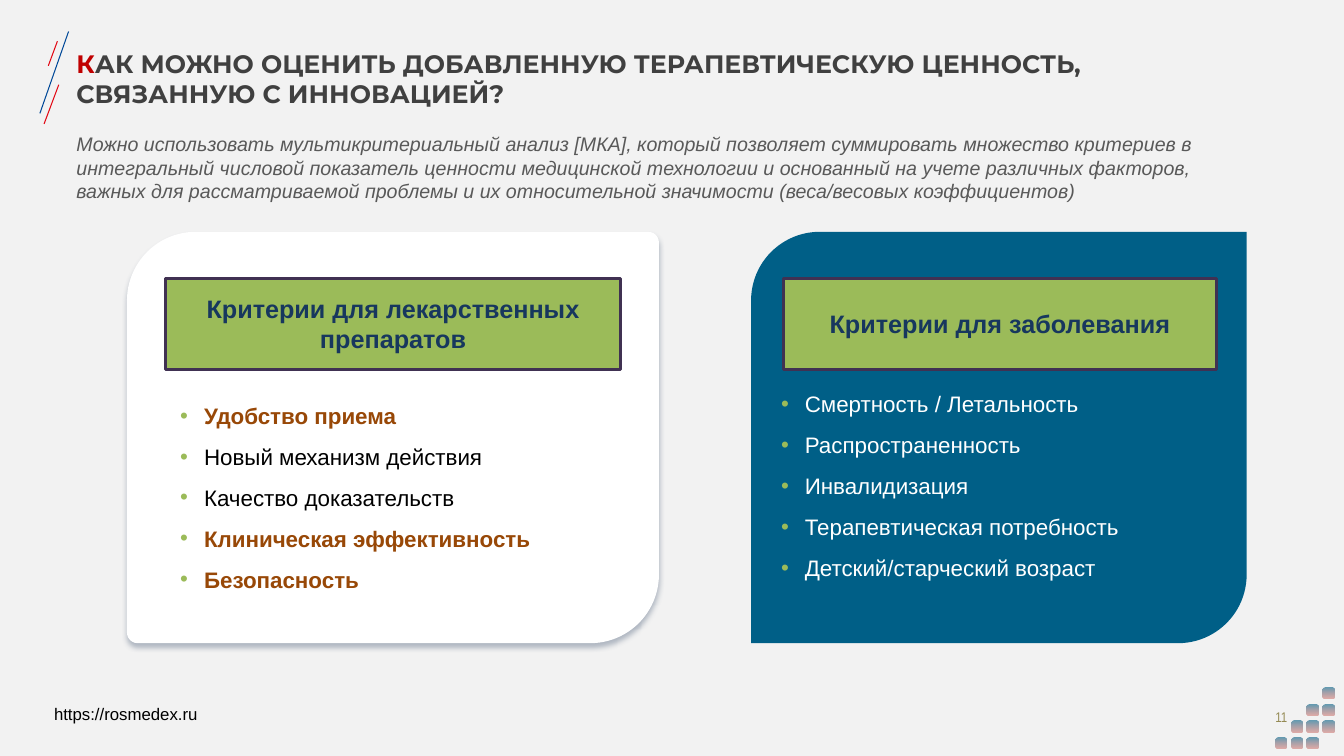
from lxml.etree import SubElement
from pptx import Presentation
from pptx.dml.color import RGBColor
from pptx.enum.shapes import MSO_CONNECTOR, MSO_SHAPE
from pptx.enum.text import MSO_ANCHOR, PP_ALIGN
from pptx.oxml.ns import qn
from pptx.util import Pt

COLORS = {
    "bg": "F2F2F2", "red": "E20713", "blue": "004898", "teal": "005F87",
    "brick": "C3443B", "accent": "C00000", "title": "404040", "lead": "595959",
    "page": "948A54", "white": "FFFFFF", "black": "000000", "green": "9BBB59",
    "plum": "403152", "navy": "17375E", "brown": "984807", "shadow": "4C5E79",
}


def rgb(name):
    return RGBColor.from_string(COLORS[name])


class Deck:
    font = "Arial"

    def __init__(self, width, height):
        self.prs = Presentation()
        self.prs.slide_width, self.prs.slide_height = Pt(width), Pt(height)
        self.s = self.prs.slides.add_slide(self.prs.slide_layouts[6])
        self.s.background.fill.solid()
        self.s.background.fill.fore_color.rgb = rgb("bg")

    def style(self, r, size, color, bold=False, italic=False, font=None):
        r.font.name = font or self.font
        r.font.size = Pt(size)
        r.font.bold, r.font.italic = bold, italic
        r.font.color.rgb = rgb(color)

    def line(self, x1, y1, x2, y2, color):
        c = self.s.shapes.add_connector(MSO_CONNECTOR.STRAIGHT, Pt(x1), Pt(y1), Pt(x2), Pt(y2))
        c.line.color.rgb = rgb(color)
        c.line.width = Pt(0.75)
        SubElement(c.element.spPr, qn("a:effectLst"))

    def shape(self, kind, x, y, w, h, fill=None, border=None):
        sp = self.s.shapes.add_shape(kind, Pt(x), Pt(y), Pt(w), Pt(h))
        sp.shadow.inherit = False
        if fill:
            sp.fill.solid()
            sp.fill.fore_color.rgb = rgb(fill)
        if border:
            sp.line.color.rgb = rgb(border)
            sp.line.width = Pt(2)
        else:
            sp.line.fill.background()
        return sp

    def tile(self, x, y, side):
        sp = self.shape(MSO_SHAPE.ROUNDED_RECTANGLE, x, y, side, side)
        sp.fill.gradient()
        sp.fill.gradient_angle = 270
        for stop, pos, color in zip(sp.fill.gradient_stops, (0, 1), ("teal", "brick")):
            stop.position = pos
            stop.color.rgb = rgb(color)
        for clr, alpha in zip(sp.element.spPr.iter(qn("a:srgbClr")), (60, 40)):
            SubElement(clr, qn("a:alpha"), val=str(alpha * 1000))

    def drop_shadow(self, sp):
        effects = sp.element.spPr.find(qn("a:effectLst"))
        shadow = SubElement(effects, qn("a:outerShdw"), blurRad=str(Pt(4)), dist=str(Pt(3)),
                            dir="5400000", algn="t", rotWithShape="0")
        clr = SubElement(shadow, qn("a:srgbClr"), val=COLORS["shadow"])
        SubElement(clr, qn("a:alpha"), val="40000")

    def text(self, x, y, w, h, text, size, color, anchor=MSO_ANCHOR.TOP,
             align=PP_ALIGN.LEFT, wrap=True, **look):
        sp = self.s.shapes.add_textbox(Pt(x), Pt(y), Pt(w), Pt(h))
        tf = sp.text_frame
        tf.text = text
        tf.word_wrap = wrap
        tf.vertical_anchor = anchor
        p = tf.paragraphs[0]
        p.alignment = align
        self.style(p.runs[0], size, color, **look)
        return p

    def label(self, x, y, w, h, text):
        sp = self.shape(MSO_SHAPE.RECTANGLE, x, y, w, h, "green", "plum")
        tf = sp.text_frame
        tf.text = text
        tf.word_wrap = True
        tf.vertical_anchor = MSO_ANCHOR.MIDDLE
        p = tf.paragraphs[0]
        p.alignment = PP_ALIGN.CENTER
        self.style(p.runs[0], 18, "navy", bold=True)

    def bullets(self, sp, items, color, strong=()):
        tf = sp.text_frame
        tf.text = "\n".join(items)
        tf.word_wrap = True
        tf.vertical_anchor = MSO_ANCHOR.TOP
        for p in tf.paragraphs:
            pPr = p._p.get_or_add_pPr()
            pPr.set("marL", str(Pt(17)))
            pPr.set("indent", str(-Pt(17)))
            SubElement(SubElement(pPr, qn("a:buClr")), qn("a:srgbClr"), val=COLORS["green"])
            SubElement(pPr, qn("a:buFont"), typeface=self.font)
            SubElement(pPr, qn("a:buChar"), char="•")
            p.alignment = PP_ALIGN.LEFT
            p.space_after = Pt(10)
            bold = p.text in strong
            self.style(p.runs[0], 16, "brown" if bold else color, bold=bold)


def main():
    d = Deck(960, 540)

    d.line(34.5, 47, 41, 29.5, "red")
    d.line(28.5, 81, 49, 22.5, "blue")
    d.line(31.5, 88.5, 42, 60.5, "red")

    for col in range(4):
        for row in range(3 - col, 3 if col == 3 else 4):
            d.tile(911 + col * 11.3, 491 + row * 12, 8)

    title = d.text(47.5, 34, 750, 44, "К", 18, "accent", MSO_ANCHOR.MIDDLE,
                   bold=True, font="Montserrat")
    r = title.add_run()
    r.text = "АК МОЖНО ОЦЕНИТЬ ДОБАВЛЕННУЮ ТЕРАПЕВТИЧЕСКУЮ ЦЕННОСТЬ, СВЯЗАННУЮ С ИННОВАЦИЕЙ?"
    d.style(r, 18, "title", bold=True, font="Montserrat")

    d.text(47.5, 90.7, 854, 58,
           "Можно использовать мультикритериальный анализ [МКА], который позволяет "
           "суммировать множество критериев в интегральный числовой показатель ценности "
           "медицинской технологии и основанный на учете различных факторов, важных для "
           "рассматриваемой проблемы и их относительной значимости (веса/весовых коэффициентов)",
           14, "lead", italic=True)

    disease = d.shape(MSO_SHAPE.ROUND_2_DIAG_RECTANGLE, 536.5, 165.6, 354, 293.8, "teal")
    disease.text_frame.margin_top = Pt(99)
    d.bullets(disease, ["Смертность / Летальность", "Распространенность", "Инвалидизация",
                        "Терапевтическая потребность", "Детский/старческий возраст"], "white")
    d.label(559.5, 198.7, 309.5, 65, "Критерии для заболевания")

    drug = d.shape(MSO_SHAPE.ROUND_2_DIAG_RECTANGLE, 90.7, 165.6, 380, 293.8, "white")
    drug.adjustments[0], drug.adjustments[1] = 0.167, 0.026
    d.drop_shadow(drug)
    drug_list = d.s.shapes.add_textbox(Pt(121.7), Pt(283.7), Pt(333), Pt(145))
    d.bullets(drug_list, ["Удобство приема", "Новый механизм действия", "Качество доказательств",
                          "Клиническая эффективность", "Безопасность"], "black",
              strong=("Удобство приема", "Клиническая эффективность", "Безопасность"))
    d.label(118, 198.7, 325.5, 65, "Критерии для лекарственных препаратов")

    d.text(31.5, 499, 118, 22, "https://rosmedex.ru", 12, "black", wrap=False)
    d.text(901.5, 497.5, 27.5, 29, "11", 10, "page", MSO_ANCHOR.MIDDLE,
           PP_ALIGN.CENTER, font="Arial Narrow")

    d.prs.save("out.pptx")


if __name__ == "__main__":
    main()
